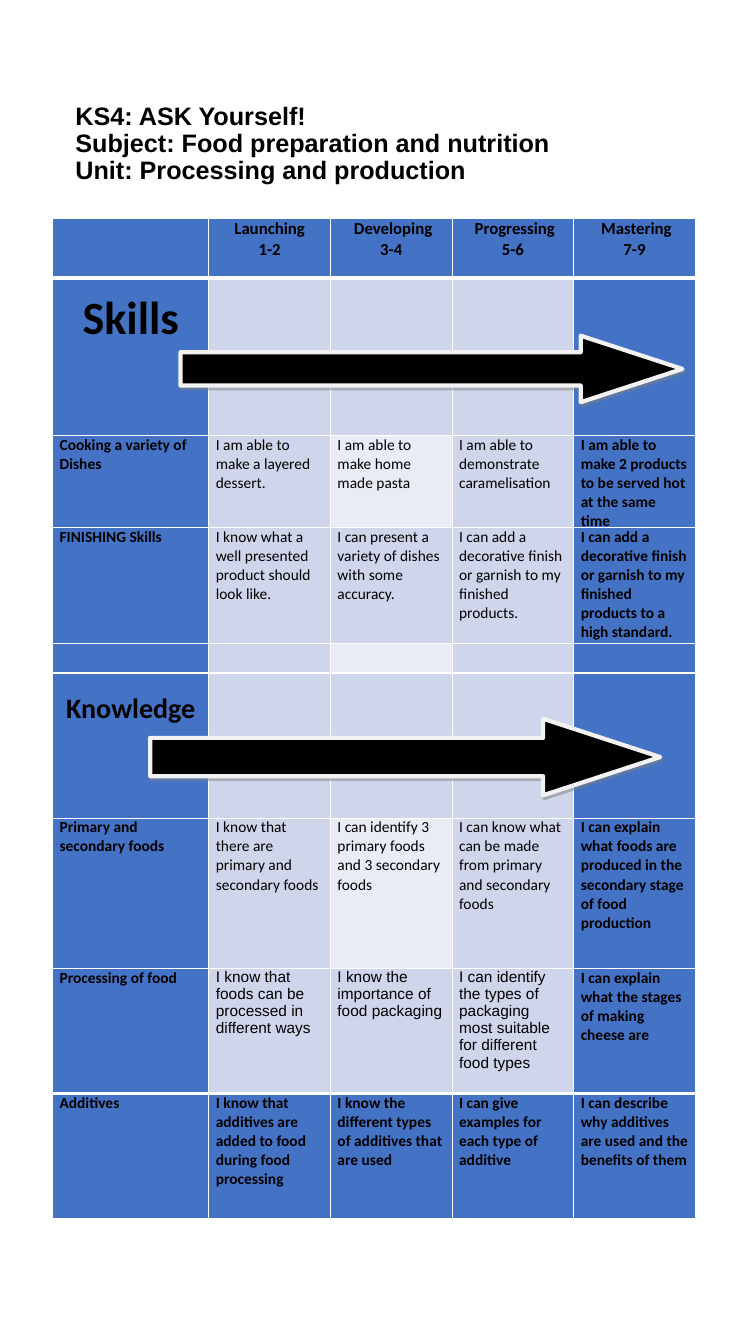
import pptx
import pptx.util
import pptx.dml.color
import pptx.enum.shapes
import pptx.enum.text
import pptx.oxml.ns
from lxml import etree

Pt = pptx.util.Pt
ALIGN = pptx.enum.text.PP_ALIGN

HUES = {"ink": "000000", "blue": "4472C4", "mid": "CFD5EA", "pale": "E9EBF5",
        "white": "FFFFFF", "rim": "F2F2F2", "shade": "7F7F7F"}
TITLE = ("KS4: ASK Yourself!\nSubject: Food preparation and nutrition\n"
         "Unit: Processing and production")
ROWS = [
    (42.5, ["", "Launching\n1-2", " Developing\n3-4", " Progressing\n5-6", " Mastering\n7-9"]),
    (112.3, ["Skills", "", "", "", ""]),
    (63.4, ["Cooking a variety of Dishes",
            "I am able to make a layered dessert.",
            "I am able to make home made pasta",
            "I am able to demonstrate caramelisation",
            "I am able to make 2 products to be served hot at the same time"]),
    (82.8, ["FINISHING Skills",
            "I know what a well presented product should look like.",
            "I can present a variety of dishes with some accuracy.",
            "I can add a decorative finish or garnish to my finished products.",
            "I can add a decorative finish or garnish to my finished products to a high standard."]),
    (20.9, ["", "", "", "", ""]),
    (103.7, ["Knowledge", "", "", "", ""]),
    (107.3, ["Primary and secondary foods",
             "I know that there are primary and secondary foods",
             "I can identify 3 primary foods and 3 secondary foods",
             "I can know what can be made from primary and secondary foods",
             "I can explain what foods are produced in the secondary stage of food production"]),
    (89.3, ["Processing of food",
            "I know that foods can be processed in different ways",
            "I know the importance of food packaging",
            "I can identify the types of packaging most suitable for different food types",
            "I can explain what the stages of making cheese are"]),
    (89.3, ["Additives",
            "I know that additives are added to food during food processing",
            "I know the different types of additives that are used",
            "I can give examples for each type of additive",
            "I can describe why additives are used and the benefits of them"]),
]
COLS = [111.6, 86.9, 86.9, 86.9, 86.9]
HEADS = {"Skills": (33, 8.5), "Knowledge": (20, 13.4)}
ARROWS = [(107.3, 513.4, 364.3, 54.7), (128.9, 239.8, 358.6, 47.5)]
LAST = len(ROWS) - 1


def tint(name):
    """Give the colour of that name."""
    return pptx.dml.color.RGBColor.from_string(HUES[name])


def node(home, tag, **attrs):
    """Add a drawing element to its parent."""
    return etree.SubElement(home, pptx.oxml.ns.qn("a:" + tag), attrs)


def put(frame, text, size=11, font="Calibri", bold=False, align=ALIGN.LEFT, lead=1.0):
    """Write formatted lines into a text frame."""
    frame.word_wrap = True
    for i, line in enumerate(text.split("\n")):
        para = frame.add_paragraph() if i else frame.paragraphs[0]
        para.alignment = align
        para.line_spacing = lead
        if not line:
            node(para._p, "endParaRPr", sz=str(size * 100))
            continue
        run = para.add_run()
        run.text = line
        run.font.size = Pt(size)
        run.font.name = font
        run.font.bold = bold
        run.font.color.rgb = tint("ink")


def edge(cell, row):
    """Draw the white borders of a cell."""
    wide = {"T": row in (1, LAST), "B": row in (0, LAST - 1)}
    props = cell._tc.get_or_add_tcPr()
    for side in "LRTB":
        line = node(props, "ln" + side, w=str(Pt(3 if wide.get(side) else 1)))
        node(node(line, "solidFill"), "srgbClr", val=HUES["white"])


def grid(slide):
    """Build the table of levels."""
    high = sum(row[0] for row in ROWS)
    table = slide.shapes.add_table(len(ROWS), len(COLS), Pt(37.6), Pt(156.2),
                                   Pt(sum(COLS)), Pt(high)).table
    table.first_row = table.horz_banding = False
    for c, width in enumerate(COLS):
        table.columns[c].width = Pt(width)
    for r, (height, texts) in enumerate(ROWS):
        table.rows[r].height = Pt(height)
        for c, text in enumerate(texts):
            cell = table.cell(r, c)
            strong = r in (0, LAST) or c in (0, 4)
            size, top = HEADS.get(text, (12 if r == 0 else 11, 0))
            cell.margin_left = cell.margin_right = Pt(5)
            cell.margin_top, cell.margin_bottom = Pt(top), Pt(0)
            edge(cell, r)
            cell.fill.solid()
            pale = c == 2 and r in (2, 4, 6)
            cell.fill.fore_color.rgb = tint("blue" if strong else "pale" if pale else "mid")
            mid = r == 0 or text in HEADS
            put(cell.text_frame, text, size=size, bold=strong,
                font="Arial" if r == 7 and not strong else "Calibri",
                align=ALIGN.CENTER if mid else ALIGN.LEFT)


def arrow(slide, box):
    """Add a black arrow with a pale rim and a shadow."""
    shape = slide.shapes.add_shape(pptx.enum.shapes.MSO_SHAPE.RIGHT_ARROW, *map(Pt, box))
    shape.adjustments[0], shape.adjustments[1] = 0.5, 1.53
    shape.fill.solid()
    shape.fill.fore_color.rgb = tint("ink")
    shape.line.color.rgb = tint("rim")
    shape.line.width = Pt(3)
    shape.shadow.inherit = False
    effect = shape._element.spPr.find(pptx.oxml.ns.qn("a:effectLst"))
    cast = node(effect, "outerShdw", dist=str(Pt(2.2)), dir=str(63 * 60000),
                algn="ctr", rotWithShape="0")
    node(node(cast, "srgbClr", val=HUES["shade"]), "alpha", val="50000")


def main():
    """Build the slide and save it."""
    deck = pptx.Presentation()
    deck.slide_width, deck.slide_height = Pt(540), Pt(960)
    slide = deck.slides.add_slide(deck.slide_layouts[6])
    title = slide.shapes.add_textbox(Pt(46.8), Pt(39.6), Pt(465.8), Pt(108.7)).text_frame
    title.vertical_anchor = pptx.enum.text.MSO_ANCHOR.MIDDLE
    title.margin_top = Pt(21.6)
    put(title, TITLE, size=18, font="Arial", bold=True, lead=0.9)
    grid(slide)
    for box in ARROWS:
        arrow(slide, box)
    deck.save("out.pptx")


if __name__ == "__main__":
    main()
